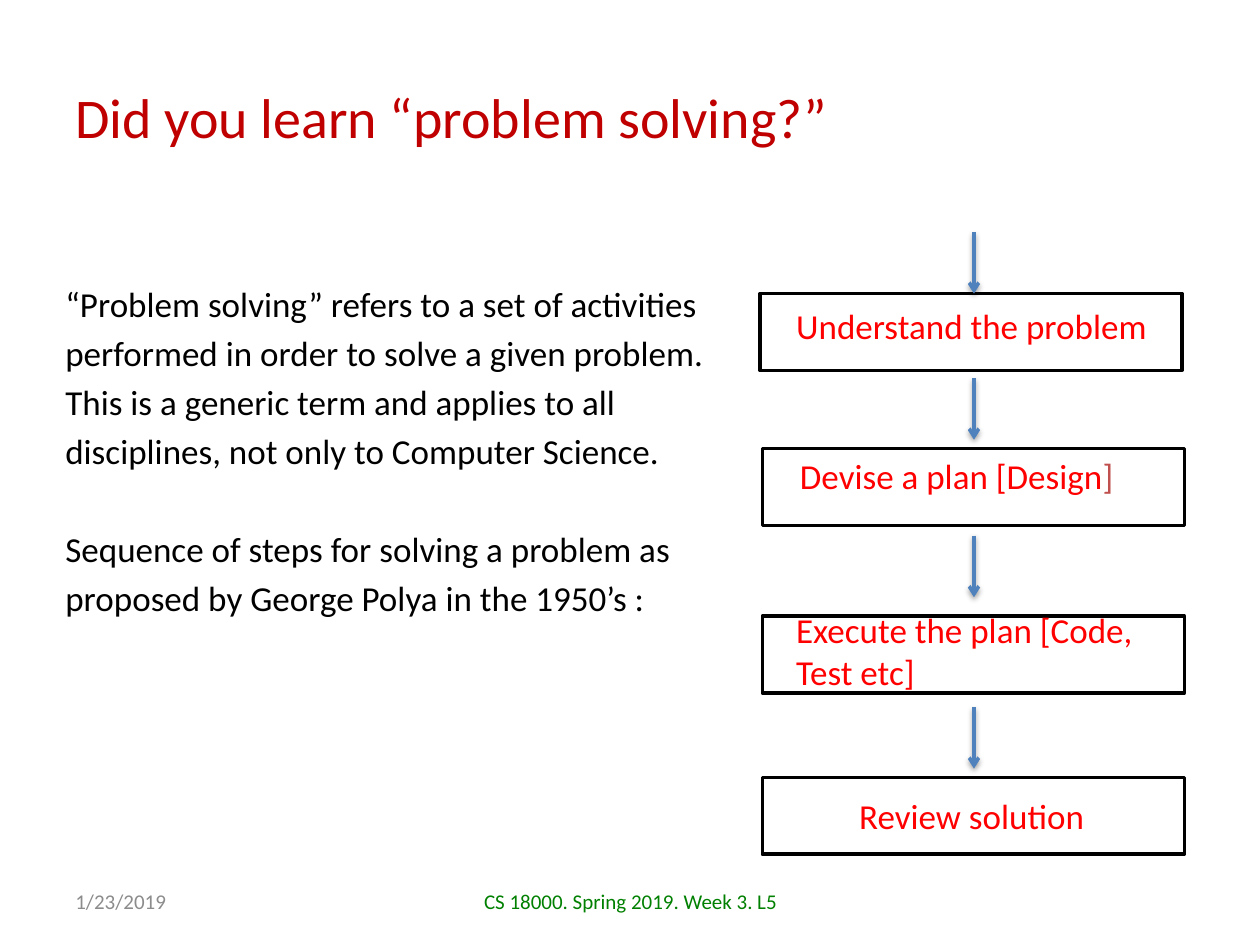
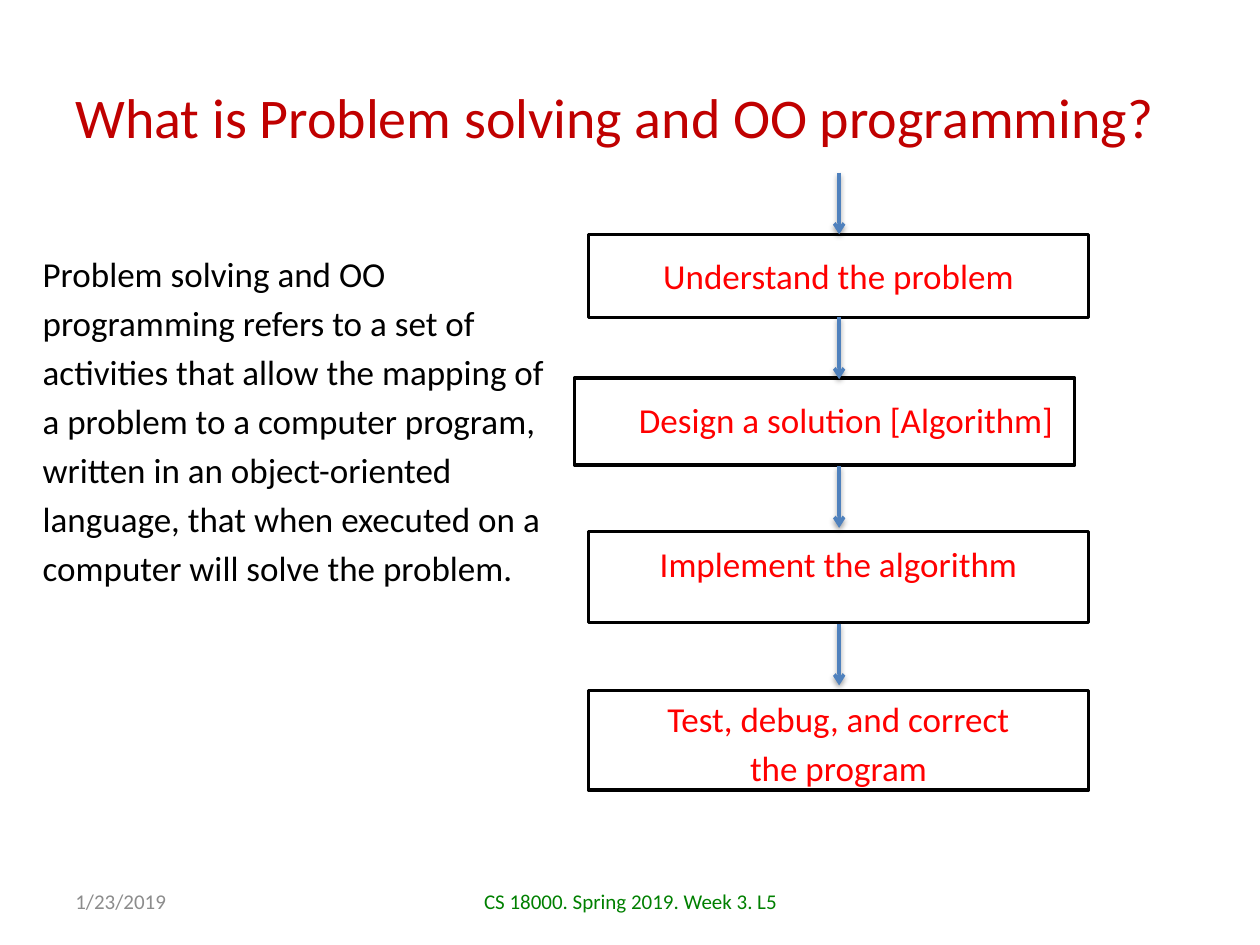
from lxml import etree
from pptx import Presentation
from pptx.dml.color import RGBColor
from pptx.enum.shapes import MSO_CONNECTOR, MSO_SHAPE
from pptx.enum.text import MSO_ANCHOR, PP_ALIGN
from pptx.oxml import parse_xml
from pptx.oxml.ns import qn
from pptx.util import Inches, Pt

LEFT, CENTER = PP_ALIGN.LEFT, PP_ALIGN.CENTER
TOP, MIDDLE = MSO_ANCHOR.TOP, MSO_ANCHOR.MIDDLE
RECTANGLE, STRAIGHT = MSO_SHAPE.RECTANGLE, MSO_CONNECTOR.STRAIGHT

COLORS = {"title": "C00000", "body": "000000", "step": "FF0000", "bracket": "C0504D",
          "course": "008000", "date": "8C8C8C", "arrow": "4F81BD",
          "box": "FFFFFF", "outline": "000000"}
FONT = "Calibri"
BODY_LEADING = 28
ARROW_ROWS = 4.9
SHADOW = (
    '<a:effectLst xmlns:a="http://schemas.openxmlformats.org/drawingml/2006/main">'
    '<a:outerShdw blurRad="40000" dist="20000" dir="5400000" rotWithShape="0">'
    '<a:srgbClr val="000000"><a:alpha val="38000"/></a:srgbClr>'
    '</a:outerShdw></a:effectLst>')

prs = Presentation()
prs.slide_width, prs.slide_height = Inches(10), Inches(7.5)

# Grid of 100 columns by 75 rows
COL = prs.slide_width / 100
ROW = prs.slide_height / 75


def grid(left, top, width, height):
    return round(left * COL), round(top * ROW), round(width * COL), round(height * ROW)


def write(slide, area, paragraphs, color, size=20, align=LEFT, anchor=TOP, leading=None):
    frame = slide.shapes.add_textbox(*grid(*area)).text_frame
    frame.word_wrap = True
    frame.vertical_anchor = anchor
    for number, text in enumerate(paragraphs):
        paragraph = frame.paragraphs[0] if number == 0 else frame.add_paragraph()
        paragraph.text = text
        paragraph.alignment = align
        if leading:
            paragraph.line_spacing = Pt(leading)
        if number:
            paragraph.space_before = Pt(leading)
        paragraph.font.name = FONT
        paragraph.font.size = Pt(size)
        paragraph.font.color.rgb = RGBColor.from_string(COLORS[color])
    return frame


# Each step: box left, top and height; text area; wording; leading; arrow top
SLIDES = [
    {
        "title": "Did you learn “problem solving?”",
        "body_area": (4.2, 21.4, 54.1, 28.4),
        "body": [
            "“Problem solving” refers to a set of activities performed in order to solve "
            "a given problem. This is a generic term and applies to all disciplines, "
            "not only to Computer Science.",
            "Sequence of steps for solving a problem as proposed by George Polya "
            "in the 1950’s :"],
        "box_width": 33.5, "arrow_column": 77.3, "align": LEFT,
        "steps": [
            (60.3, 23.3, 6.1, (62.2, 23.7, 33.5, 4.4), "Understand the problem", None, 18.4),
            (60.5, 35.6, 6.1, (62.5, 35.6, 33.5, 4.4), "Devise a plan [Design", None, 30),
            (60.5, 48.9, 6.1, (62.2, 47.8, 33.5, 7.7),
             "Execute the plan [Code,\nTest etc]", None, 42.5),
            (60.5, 61.7, 6.1, (67.2, 62.6, 20.2, 4.4), "Review solution", None, 56.1)],
    },
    {
        "title": "What is Problem solving and OO programming?",
        "body_area": (2.4, 19, 43.1, 28.4),
        "body": [
            "Problem solving and OO programming refers to a set of activities that allow "
            "the mapping of a problem to a computer program, written in an "
            "object-oriented language, that when executed on a computer will solve "
            "the problem."],
        "box_width": 39.7, "arrow_column": 66.6, "align": CENTER,
        "steps": [
            (46.7, 18.6, 6.6, (49.8, 19.7, 33.5, 4.4), "Understand the problem", None, 13.7),
            (45.6, 30, 6.9, (46.7, 30.6, 40.9, 4.7),
             "Design a solution [Algorithm]", BODY_LEADING, 25.2),
            (46.7, 42.2, 7.2, (49.8, 42.6, 33.5, 4.4), "Implement the algorithm", None, 37),
            (46.7, 54.8, 7.9, (51.4, 54.3, 30.3, 8.8),
             "Test, debug, and correct the program", BODY_LEADING, 49.5)],
    },
]

for content in SLIDES:
    slide = prs.slides.add_slide(prs.slide_layouts[6])

    # Title, explanation and footer
    write(slide, (5, 3, 90, 12.5), [content["title"]], "title", size=32, anchor=MIDDLE)
    write(slide, content["body_area"], content["body"], "body", leading=BODY_LEADING)
    write(slide, (34.2, 69.5, 31.7, 4), ["CS 18000. Spring 2019. Week 3. L5"], "course",
          size=12, align=CENTER, anchor=MIDDLE)
    write(slide, (5, 69.5, 23.3, 4), ["1/23/2019"], "date", size=12, anchor=MIDDLE)

    # Flow of steps
    for left, top, height, text_area, wording, leading, arrow_top in content["steps"]:
        box = slide.shapes.add_shape(
            RECTANGLE, *grid(left, top, content["box_width"], height))
        box.shadow.inherit = False
        box.fill.solid()
        box.fill.fore_color.rgb = RGBColor.from_string(COLORS["box"])
        box.line.color.rgb = RGBColor.from_string(COLORS["outline"])
        box.line.width = Pt(2)

        label = write(slide, text_area, [wording], "step",
                      align=content["align"], leading=leading)
        if wording.endswith("[Design"):
            bracket = label.paragraphs[0].add_run()
            bracket.text = "]"
            bracket.font.color.rgb = RGBColor.from_string(COLORS["bracket"])

        # Arrow leading into the step
        x, start, _, length = grid(content["arrow_column"], arrow_top, 0, ARROW_ROWS)
        arrow = slide.shapes.add_connector(STRAIGHT, x, start, x, start + length)
        arrow.line.color.rgb = RGBColor.from_string(COLORS["arrow"])
        arrow.line.width = Pt(2)
        etree.SubElement(arrow.line._get_or_add_ln(), qn("a:tailEnd"), type="arrow")
        arrow._element.spPr.append(parse_xml(SHADOW))

prs.save("out.pptx")
